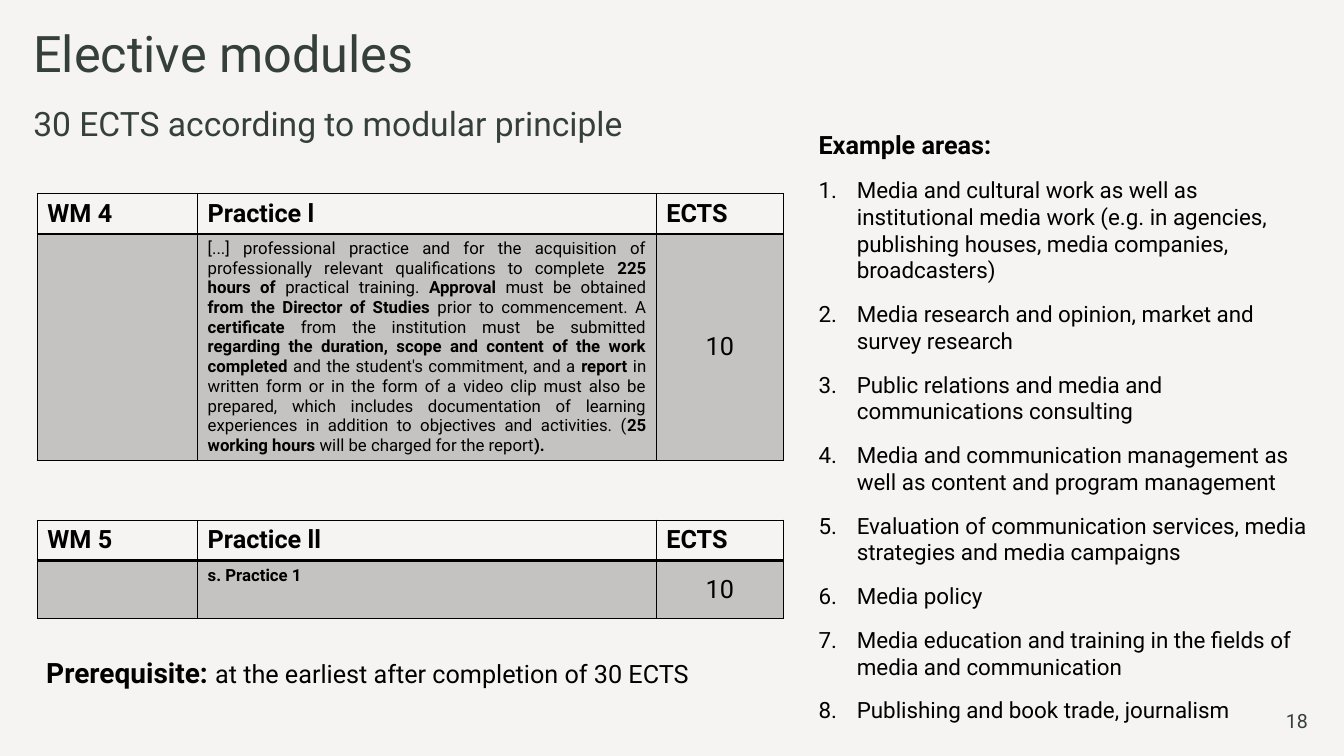
from lxml.etree import SubElement
from pptx import Presentation
from pptx.dml.color import RGBColor
from pptx.enum.text import MSO_ANCHOR, MSO_AUTO_SIZE, PP_ALIGN
from pptx.oxml.ns import qn
from pptx.util import Inches, Pt

HUES = {"back": "F6F4F2", "title": "35403A", "text": "000000", "body": "C5C3C1"}
COLS = (1.59, 4.55, 1.26)
HEAD = 0.4
AREAS = (
    "Media and cultural work as well as institutional media work "
    "(e.g. in agencies, publishing houses, media companies, broadcasters)",
    "Media research and opinion, market and survey research",
    "Public relations and media and communications consulting",
    "Media communication management as well as content and program management".replace(
        "Media ", "Media and ", 1),
    "Evaluation of communication services, media strategies and media campaigns",
    "Media policy",
    "Media education and training in the fields of media and communication",
    "Publishing and book trade, journalism",
)
AREAS = AREAS[:3] + (
    "Media and communication management as well as content and program management",
) + AREAS[4:]
TERMS = (
    ("[...] professional practice and for the acquisition of professionally "
     "relevant qualifications to complete ", False),
    ("225 hours of ", True),
    ("practical training. ", False),
    ("Approval ", True),
    ("must be obtained ", False),
    ("from the Director of Studies ", True),
    ("prior to commencement. A ", False),
    ("certificate ", True),
    ("from the institution must be submitted ", False),
    ("regarding the duration, scope and content of the work completed ", True),
    ("and the student's commitment, and a ", False),
    ("report ", True),
    ("in written form or in the form of a video clip must also be prepared, "
     "which includes documentation of learning experiences in addition to "
     "objectives and activities. (", False),
    ("25 working hours ", True),
    ("will be charged for the report", False),
    (").", True),
)


def add_run(para, text, size, bold=False, hue="text"):
    """Add one formatted run to a paragraph."""
    run = para.add_run()
    run.text = text
    font = run.font
    font.name, font.size, font.bold = "Roboto", Pt(size), bold
    font.color.rgb = RGBColor.from_string(HUES[hue])


def add_box(slide, box):
    """Add a wrapping text box and return its frame."""
    frame = slide.shapes.add_textbox(*map(Inches, box)).text_frame
    frame.word_wrap = True
    return frame


def add_title(slide, box):
    """Place the two-line heading in the title placeholder."""
    title = slide.shapes.title
    title.left, title.top, title.width, title.height = map(Inches, box)
    frame = title.text_frame
    frame.word_wrap = True
    frame.auto_size = MSO_AUTO_SIZE.NONE
    frame.vertical_anchor = MSO_ANCHOR.BOTTOM
    para = frame.paragraphs[0]
    para.alignment = PP_ALIGN.LEFT
    para.line_spacing = 1.5
    para.space_before = Pt(0)
    add_run(para, "Elective modules", 36, hue="title")
    para.add_line_break()
    add_run(para, "30 ECTS according to modular principle", 24, hue="title")


def set_edges(cell, base):
    """Draw the four borders of a cell, with its own base width."""
    props = cell._tc.get_or_add_tcPr()
    for side, width in (("L", 1), ("R", 1), ("T", 1), ("B", base)):
        line = SubElement(props, qn(f"a:ln{side}"), w=str(Pt(width)))
        fill = SubElement(line, qn("a:solidFill"))
        SubElement(fill, qn("a:srgbClr"), val=HUES["text"])


def add_module(slide, box, code, name, terms):
    """Add the table of one module."""
    table = slide.shapes.add_table(2, 3, *map(Inches, box)).table
    table.first_row = table.horz_banding = False
    for col, width in zip(table.columns, COLS):
        col.width = Inches(width)
    for row, height in zip(table.rows, (HEAD, box[3] - HEAD)):
        row.height = Inches(height)
    for col, label in enumerate((code, name, "ECTS")):
        top, low = table.cell(0, col), table.cell(1, col)
        set_edges(top, 2)
        set_edges(low, 1)
        top.fill.background()
        low.fill.solid()
        low.fill.fore_color.rgb = RGBColor.from_string(HUES["body"])
        top.vertical_anchor = MSO_ANCHOR.MIDDLE
        add_run(top.text_frame.paragraphs[0], label, 18, True)
    para = table.cell(1, 1).text_frame.paragraphs[0]
    para.alignment = PP_ALIGN.JUSTIFY
    para.space_after = Pt(6)
    for text, bold in terms:
        add_run(para, text, 12, bold)
    cell = table.cell(1, 2)
    cell.vertical_anchor = MSO_ANCHOR.MIDDLE
    para = cell.text_frame.paragraphs[0]
    para.alignment = PP_ALIGN.CENTER
    add_run(para, "10", 18)


def add_areas(slide, box):
    """Add the numbered list of example areas."""
    frame = add_box(slide, box)
    para = frame.paragraphs[0]
    para.space_after = Pt(12)
    add_run(para, "Example areas:", 18, True)
    for area in AREAS:
        para = frame.add_paragraph()
        para.space_after = Pt(12)
        props = para._p.get_or_add_pPr()
        props.set("marL", str(Inches(0.38)))
        props.set("indent", str(Inches(-0.38)))
        SubElement(props, qn("a:buAutoNum"), type="arabicPeriod")
        add_run(para, area, 16)


def add_note(slide, box):
    """Add the prerequisite line."""
    para = add_box(slide, box).paragraphs[0]
    add_run(para, "Prerequisite: ", 20, True)
    add_run(para, "at the earliest after completion of 30 ECTS", 18)


def add_page(slide, box):
    """Add the page number."""
    frame = add_box(slide, box)
    frame.vertical_anchor = MSO_ANCHOR.MIDDLE
    para = frame.paragraphs[0]
    para.alignment = PP_ALIGN.RIGHT
    add_run(para, "18", 14, hue="title")


def main():
    """Build and save the slide."""
    deck = Presentation()
    deck.slide_width, deck.slide_height = Inches(13.33), Inches(7.5)
    slide = deck.slides.add_slide(deck.slide_layouts[5])
    fill = slide.background.fill
    fill.solid()
    fill.fore_color.rgb = RGBColor.from_string(HUES["back"])
    add_title(slide, (0.23, 0.63, 11.57, 0.84))
    add_module(slide, (0.37, 1.92, 7.4, 2.64), "WM 4", "Practice l", TERMS)
    add_module(slide, (0.37, 5.16, 7.4, 0.98), "WM 5", "Practice ll",
               [("s. Practice 1", True)])
    add_areas(slide, (8.02, 1.23, 5.09, 6.26))
    add_note(slide, (0.36, 6.45, 7.05, 0.44))
    add_page(slide, (12.5, 6.95, 0.57, 0.4))
    deck.save("out.pptx")


if __name__ == "__main__":
    main()
